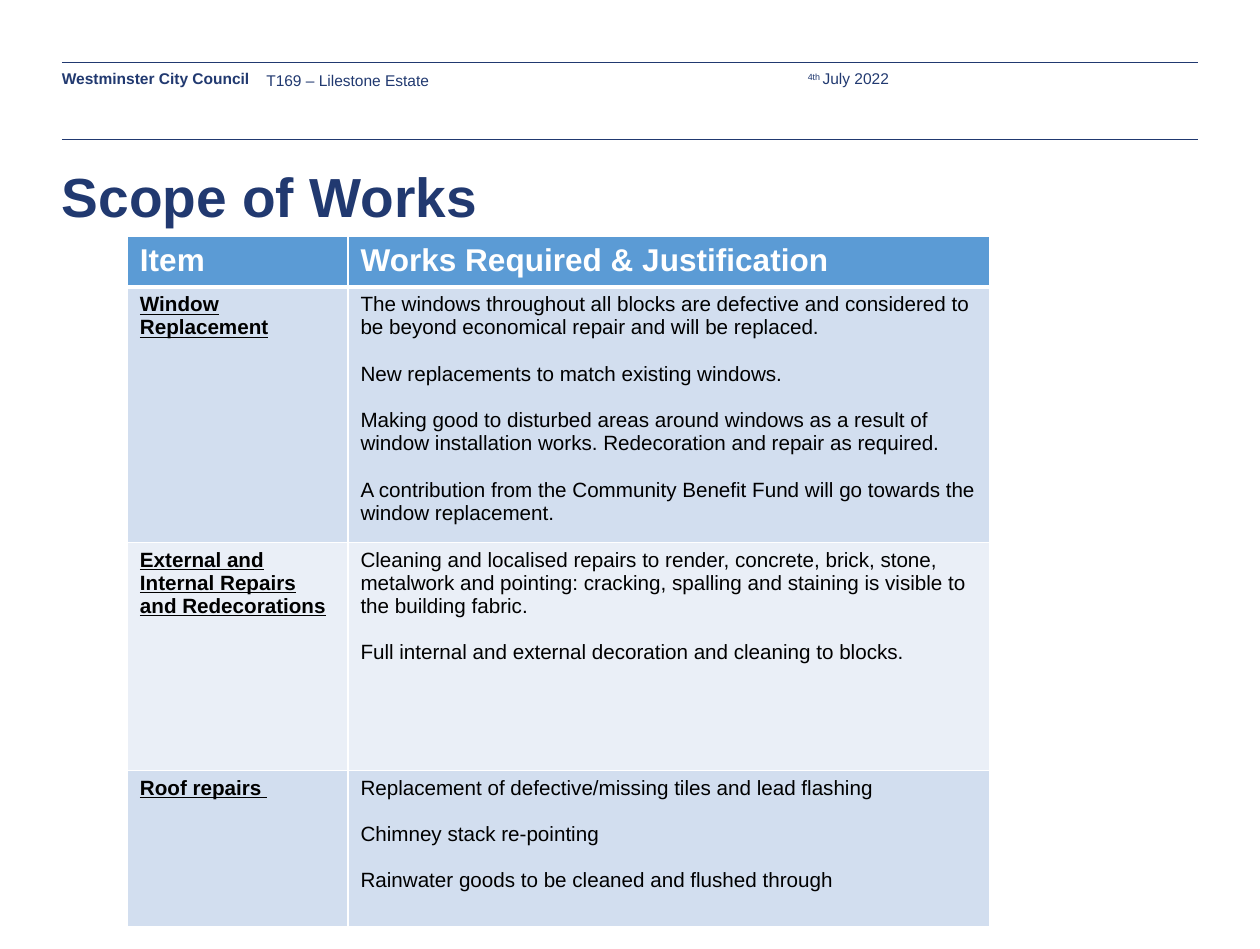
import pptx
import pptx.util
import pptx.dml.color
import pptx.enum.shapes
import pptx.enum.text
import pptx.oxml
import pptx.oxml.ns
import lxml.etree

Inches = pptx.util.Inches
Pt = pptx.util.Pt
RGB = pptx.dml.color.RGBColor.from_string
ANCHOR = pptx.enum.text.MSO_ANCHOR

THEME = {
    "font": "Arial",
    "navy": "213970", "black": "000000", "white": "FFFFFF",
    "header": "5B9BD5", "bands": ["D2DEEF", "EAEFF7"],
    "title": 32, "table_head": 18.3, "body": 12, "strap": 9,
}


def add_run(p, text, size, color, bold=False, underline=False):
    r = p.add_run()
    r.text = text
    r.font.name = THEME["font"]
    r.font.size = Pt(size)
    r.font.color.rgb = RGB(THEME[color])
    r.font.bold = bold
    r.font.underline = underline
    return r


def set_borders(cell, bottom):
    tcPr = cell._tc.get_or_add_tcPr()
    for i, (side, width) in enumerate([("L", 1), ("R", 1), ("T", 1), ("B", bottom)]):
        tcPr.insert(i, pptx.oxml.parse_xml(
            f'<a:ln{side} {pptx.oxml.ns.nsdecls("a")} w="{Pt(width)}"><a:solidFill>'
            f'<a:srgbClr val="{THEME["white"]}"/></a:solidFill></a:ln{side}>'))


prs = pptx.Presentation()
prs.slide_width = Inches(10.17)
prs.slide_height = Inches(7.66)
s = prs.slides.add_slide(prs.slide_layouts[5])

for y in (0.5, 1.12):
    line = s.shapes.add_connector(
        pptx.enum.shapes.MSO_CONNECTOR.STRAIGHT,
        Inches(0.5), Inches(y), Inches(9.67), Inches(y))
    line.line.color.rgb = RGB(THEME["navy"])
    line.line.width = Pt(0.25)
    lxml.etree.SubElement(line._element.spPr, pptx.oxml.ns.qn("a:effectLst"))

title = s.shapes.title
title.left, title.top = Inches(0.5), Inches(1.31)
title.width, title.height = Inches(9.17), Inches(0.82)
tf = title.text_frame
tf.margin_left = tf.margin_top = tf.margin_right = tf.margin_bottom = 0
tf.vertical_anchor = ANCHOR.TOP
tf.auto_size = pptx.enum.text.MSO_AUTO_SIZE.NONE
p = tf.paragraphs[0]
p.alignment = pptx.enum.text.PP_ALIGN.LEFT
add_run(p, "Scope of Works", THEME["title"], "navy", bold=True)

STRAPS = [
    (0.5, 1.53, 0.15, ANCHOR.TOP, False, ["Westminster City Council"]),
    (2.15, 3.57, 0.41, ANCHOR.TOP, True, ["T169 – Lilestone Estate"]),
    (6.52, 2.29, 0.15, ANCHOR.MIDDLE, True, ["4th ", "July 2022"]),
]
for left, width, height, anchor, wrap, texts in STRAPS:
    sp = s.shapes.add_textbox(Inches(left), Inches(0.56), Inches(width), Inches(height))
    tf = sp.text_frame
    tf.margin_left = tf.margin_top = tf.margin_right = tf.margin_bottom = 0
    tf.vertical_anchor = anchor
    tf.word_wrap = wrap
    p = tf.paragraphs[0]
    if left == 2.15:
        p.line_spacing = Pt(12)
    for text in texts:
        r = add_run(p, text, THEME["strap"], "navy", bold=not wrap)
        if text == "4th ":
            r.font._element.set("baseline", "30000")

HEADINGS = ["Item", "Works Required & Justification"]
WORKS = [
    ("Window Replacement", [
        "The windows throughout all blocks are defective and considered to be beyond "
        "economical repair and will be replaced.",
        "New replacements to match existing windows.",
        "Making good to disturbed areas around windows as a result of window "
        "installation works. Redecoration and repair as required.",
        "A contribution from the Community Benefit Fund will go towards the window "
        "replacement.",
    ]),
    ("External and Internal Repairs and Redecorations", [
        "Cleaning and localised repairs to render, concrete, brick, stone, metalwork "
        "and pointing: cracking, spalling and staining is visible to the building fabric.",
        "Full internal and external decoration and cleaning to blocks.",
    ]),
    ("Roof repairs ", [
        "Replacement of defective/missing tiles and lead flashing",
        "Chimney stack re-pointing",
        "Rainwater goods to be cleaned and flushed through",
    ]),
]
ROW_HEIGHTS = [0.38, 1.97, 1.84, 1.26]

table = s.shapes.add_table(
    len(ROW_HEIGHTS), 2, Inches(1.03), Inches(1.91),
    Inches(6.96), Inches(sum(ROW_HEIGHTS))).table
for column, width in zip(table.columns, (1.78, 5.18)):
    column.width = Inches(width)
for row, height in zip(table.rows, ROW_HEIGHTS):
    row.height = Inches(height)

for cell, heading in zip(table.rows[0].cells, HEADINGS):
    cell.fill.solid()
    cell.fill.fore_color.rgb = RGB(THEME["header"])
    set_borders(cell, 3)
    add_run(cell.text_frame.paragraphs[0], heading, THEME["table_head"], "white", bold=True)

for i, (item, works) in enumerate(WORKS):
    for j, paragraphs in enumerate([[item], works]):
        cell = table.cell(i + 1, j)
        cell.fill.solid()
        cell.fill.fore_color.rgb = RGB(THEME["bands"][i % 2])
        set_borders(cell, 1)
        tf = cell.text_frame
        for k, text in enumerate(paragraphs):
            p = tf.add_paragraph() if k else tf.paragraphs[0]
            if k:
                p.space_before = Pt(13.5)
            add_run(p, text, THEME["body"], "black", bold=j == 0, underline=j == 0)

prs.save("out.pptx")
